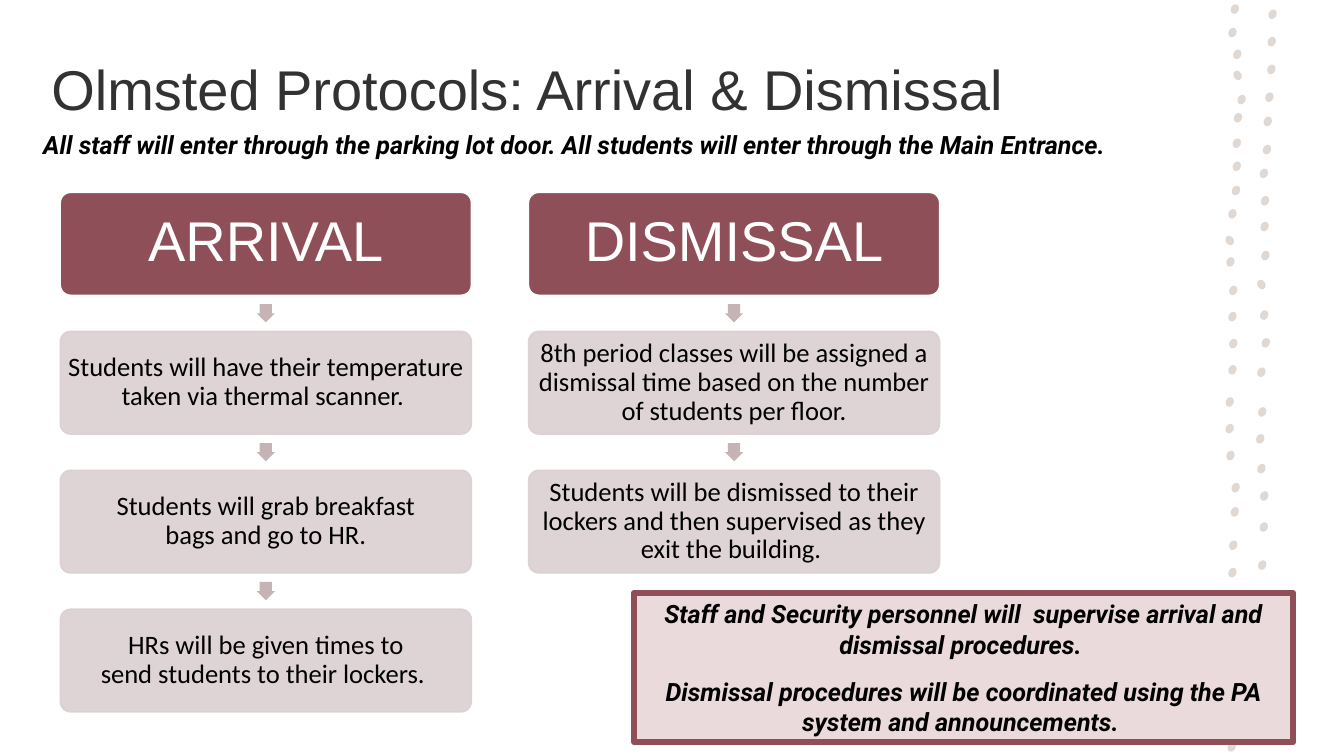
from dataclasses import dataclass

import lxml.etree
import pptx
import pptx.dml.color
import pptx.enum.shapes
import pptx.enum.text
import pptx.oxml.ns
import pptx.util

Cm = pptx.util.Cm
Pt = pptx.util.Pt
PRESET = pptx.enum.shapes.MSO_SHAPE
ALIGN = pptx.enum.text.PP_ALIGN
ANCHOR = pptx.enum.text.MSO_ANCHOR


@dataclass(frozen=True)
class Theme:
    title_ink: str = "323232"
    ink: str = "000000"
    white: str = "FFFFFF"
    burgundy: str = "8F4F58"
    step: str = "DBD0D1"
    arrow: str = "C6B3B5"
    note: str = "EBDADC"
    pebble: str = "E0D8D2"
    heading_font: str = "Arial"
    step_font: str = "Calibri"
    note_font: str = "Roboto"
    heading_size: int = 40
    step_size: int = 19
    note_size: int = 18


THEME = Theme()

# Flow grid, in centimetres
FLOW_LEFT, FLOW_TOP = 1.52, 4.85
BOX_WIDTH, BOX_HEIGHT = 10.36, 2.59
COLUMN_PITCH, ROW_PITCH = 11.8, 3.5
ARROW_SIZE = 0.46
PEBBLE_WIDTH, PEBBLE_HEIGHT = 0.2, 0.25

# Non-breaking space, keeps word pairs on one line
TIE = chr(160)

FLOWS = [
    ("ARRIVAL", [
        f"Students will have their temperature taken via thermal scanner.{TIE}",
        f"Students will grab breakfast bags{TIE}and go to HR.",
        f"HRs will be{TIE}given times to send{TIE}students to their lockers.{TIE}",
    ]),
    ("DISMISSAL", [
        "8th period classes will be assigned a dismissal time based on the number of students per floor.",
        f"Students will be dismissed to their lockers and then{TIE}supervised "
        f"as they exit{TIE}the building.{TIE}",
    ]),
]
ENTRANCE_RULE = ("All staff will enter through the parking lot door. "
                 f"All students will enter through the Main Entrance.{TIE}")
SUPERVISION = [
    f"Staff and Security personnel will{TIE} supervise arrival and dismissal procedures.{TIE}",
    f"Dismissal procedures will be coordinated using the PA system and announcements.{TIE}",
]

# Pebble centres in centimetres, grouped by lean in degrees
PEBBLES = {
    25: [
        (32.07, 0.36), (32.05, 1.05), (32.04, 1.75), (31.99, 2.45), (31.95, 3.06),
        (31.93, 3.77), (31.85, 4.37), (31.88, 5.06), (31.87, 5.71), (31.89, 6.44),
        (31.86, 7.94), (31.9, 8.64), (31.79, 9.38), (31.81, 10.38), (31.76, 11.06),
        (31.79, 11.81), (31.86, 12.5), (31.85, 13.28), (31.81, 14.24),
        (31.12, 0.23), (31.06, 0.82), (31.18, 1.37), (31.29, 2.51), (31.2, 2.97),
        (31.17, 3.61), (31.17, 4.19), (31.15, 4.8), (31.06, 5.39), (31.01, 6.6),
        (31.08, 7.32), (31.06, 7.98), (31.08, 8.66), (31.06, 9.32), (30.99, 10.13),
        (30.99, 10.8), (31.01, 11.48), (31.14, 12.29), (31.12, 12.9), (31.08, 13.74),
        (31.06, 14.43), (31.04, 18.82),
    ],
    -30: [(31.79, 7.17), (31.19, 1.9), (30.99, 6.06)],
}


def rgb(value):
    return pptx.dml.color.RGBColor.from_string(value)


def add_run(paragraph, text, font, size, color, emphasis=False):
    run = paragraph.add_run()
    run.text = text
    run.font.name = font
    run.font.size = Pt(size)
    run.font.color.rgb = rgb(color)
    if emphasis:
        run.font.bold = run.font.italic = True


def paint(shape, fill, line=None, width=1):
    shape.shadow.inherit = False
    shape.fill.solid()
    shape.fill.fore_color.rgb = rgb(fill)
    if line:
        shape.line.color.rgb = rgb(line)
        shape.line.width = Pt(width)
    else:
        shape.line.fill.background()


def set_opacity(shape, percent):
    qn = pptx.oxml.ns.qn
    for color in shape.fill._xPr.iter(qn("a:srgbClr")):
        lxml.etree.SubElement(color, qn("a:alpha")).set("val", str(percent * 1000))


def add_pebble(slide, x, y, lean):
    pebble = slide.shapes.add_shape(
        PRESET.OVAL, Cm(x - PEBBLE_WIDTH / 2), Cm(y - PEBBLE_HEIGHT / 2),
        Cm(PEBBLE_WIDTH), Cm(PEBBLE_HEIGHT))
    pebble.rotation = lean
    paint(pebble, THEME.pebble)


def add_flow_box(slide, left, top, text, fill, line, font, size, color, inset):
    box = slide.shapes.add_shape(PRESET.ROUNDED_RECTANGLE, Cm(left), Cm(top),
                                 Cm(BOX_WIDTH), Cm(BOX_HEIGHT))
    box.adjustments[0] = 0.1
    paint(box, fill, line)
    frame = box.text_frame
    frame.word_wrap = True
    frame.vertical_anchor = ANCHOR.MIDDLE
    frame.margin_left = frame.margin_right = Cm(inset)
    frame.margin_top = frame.margin_bottom = Cm(inset)
    paragraph = frame.paragraphs[0]
    paragraph.alignment = ALIGN.CENTER
    paragraph.line_spacing = 0.9
    add_run(paragraph, text, font, size, color)
    return box


def add_flow_arrow(slide, left, next_top):
    gap = ROW_PITCH - BOX_HEIGHT
    arrow = slide.shapes.add_shape(
        PRESET.DOWN_ARROW, Cm(left + (BOX_WIDTH - ARROW_SIZE) / 2),
        Cm(next_top - (gap + ARROW_SIZE) / 2), Cm(ARROW_SIZE), Cm(ARROW_SIZE))
    arrow.adjustments[0], arrow.adjustments[1] = 0.67, 0.5
    paint(arrow, THEME.arrow)


def add_flow(slide, left, heading, steps):
    add_flow_box(slide, left, FLOW_TOP, heading, THEME.burgundy, THEME.white,
                 THEME.heading_font, THEME.heading_size, THEME.white, 0.15)
    for row, step in enumerate(steps, start=1):
        top = FLOW_TOP + row * ROW_PITCH
        add_flow_arrow(slide, left, top)
        step_box = add_flow_box(slide, left, top, step, THEME.step, THEME.step,
                                THEME.step_font, THEME.step_size, THEME.ink, 0.08)
        set_opacity(step_box, 90)


def set_title(slide, text):
    title = slide.shapes.title
    title.left, title.top, title.width, title.height = Cm(1.04), Cm(0.79), Cm(28.7), Cm(2.84)
    title.text_frame.vertical_anchor = ANCHOR.MIDDLE
    paragraph = title.text_frame.paragraphs[0]
    paragraph.alignment = ALIGN.LEFT
    add_run(paragraph, text, THEME.heading_font, THEME.heading_size, THEME.title_ink)


def add_supervision_note(slide):
    note = slide.shapes.add_shape(PRESET.RECTANGLE, Cm(15.98), Cm(14.94), Cm(16.61), Cm(3.76))
    paint(note, THEME.note, THEME.burgundy, 4.5)
    frame = note.text_frame
    frame.word_wrap = True
    frame.vertical_anchor = ANCHOR.MIDDLE
    for index, sentence in enumerate(SUPERVISION):
        paragraph = frame.add_paragraph() if index else frame.paragraphs[0]
        paragraph.alignment = ALIGN.CENTER
        if index:
            paragraph.space_before = Pt(12)
        add_run(paragraph, sentence, THEME.note_font, THEME.note_size, THEME.ink, True)


def add_entrance_rule(slide):
    rule = slide.shapes.add_textbox(Cm(0.84), Cm(3.14), Cm(30.45), Cm(1.02))
    rule.text_frame.word_wrap = True
    add_run(rule.text_frame.paragraphs[0], ENTRANCE_RULE,
            THEME.note_font, THEME.note_size, THEME.ink, True)


def main():
    deck = pptx.Presentation()
    deck.slide_width, deck.slide_height = Cm(33.87), Cm(19.05)
    slide = deck.slides.add_slide(deck.slide_layouts[5])

    # Pebble trail on the right edge
    for lean, centres in PEBBLES.items():
        for x, y in centres:
            add_pebble(slide, x, y, lean)

    # Title, the two flows and the notes
    set_title(slide, "Olmsted Protocols: Arrival & Dismissal")
    for column, (heading, steps) in enumerate(FLOWS):
        add_flow(slide, FLOW_LEFT + column * COLUMN_PITCH, heading, steps)
    add_supervision_note(slide)
    add_entrance_rule(slide)
    deck.save("out.pptx")


if __name__ == "__main__":
    main()
